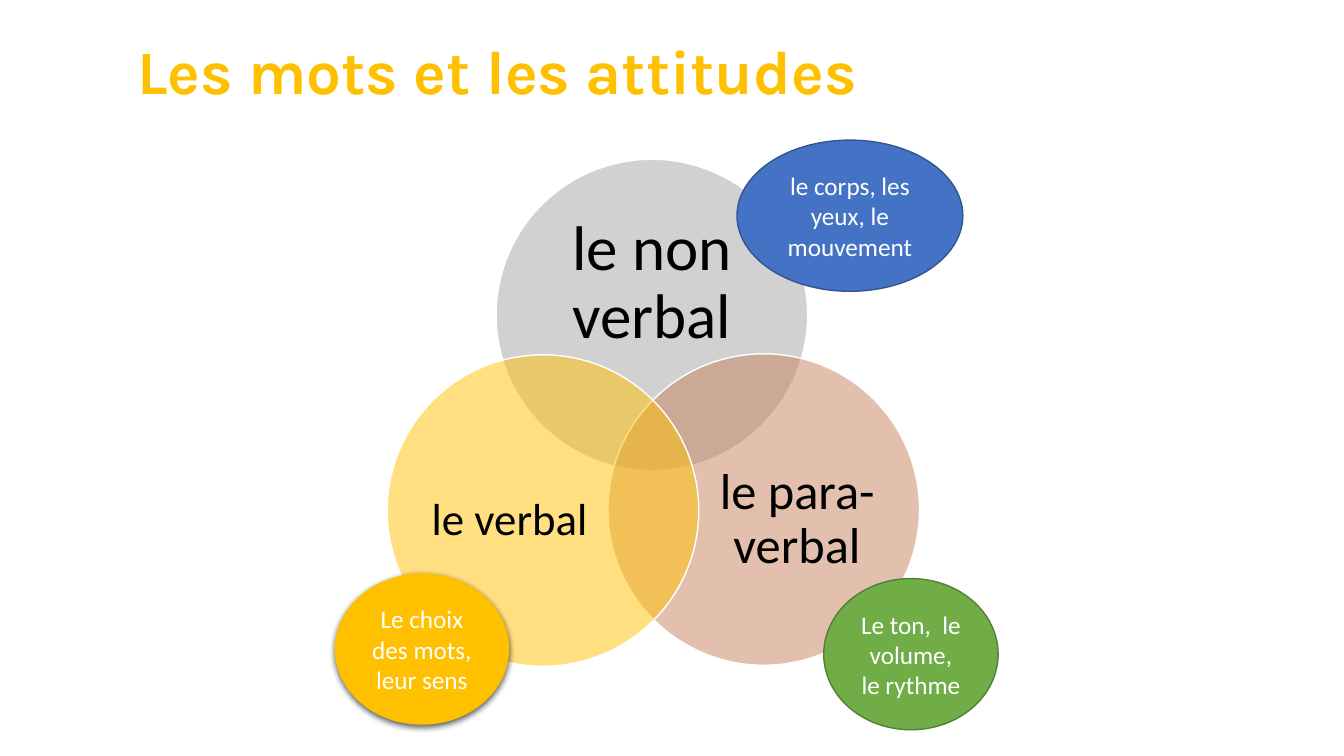
from dataclasses import dataclass
from lxml.etree import SubElement as Sub
from pptx import Presentation
from pptx.dml.color import RGBColor as RGB
from pptx.enum.shapes import MSO_SHAPE as Kind
from pptx.enum.text import MSO_ANCHOR as Anchor, PP_ALIGN as Align
from pptx.oxml.ns import qn
from pptx.util import Inches, Pt


@dataclass(frozen=True)
class Theme:
    gold: str = "FFC000"
    gray: str = "A5A5A5"
    clay: str = "C9835D"
    blue: str = "4472C4"
    navy: str = "325491"
    green: str = "70AD47"
    moss: str = "538035"
    white: str = "FFFFFF"
    black: str = "000000"
    head: str = "Karla"
    body: str = "Calibri"
    title: int = 44
    top: int = 45
    right: int = 36
    left: int = 32
    note: int = 18


T = Theme()
deck = Presentation()
deck.slide_width, deck.slide_height = Inches(13.33), Inches(7.5)
slide = deck.slides.add_slide(deck.slide_layouts[5])


def write(shape, text, size, color, name=T.body, bold=False, align=Align.CENTER, space=1.0):
    frame = shape.text_frame
    frame.word_wrap = True
    frame.vertical_anchor = Anchor.MIDDLE
    para = frame.paragraphs[0]
    para.alignment, para.line_spacing = align, space
    run = para.add_run()
    run.text = text
    for key, val in {"name": name, "size": Pt(size), "bold": bold}.items():
        setattr(run.font, key, val)
    run.font.color.rgb = RGB.from_string(color)
    return frame


def oval(box, fill, edge):
    shape = slide.shapes.add_shape(Kind.OVAL, *map(Inches, box))
    shape.shadow.inherit = False
    shape.fill.solid()
    shape.fill.fore_color.rgb = RGB.from_string(fill)
    if edge:
        shape.line.color.rgb = RGB.from_string(edge)
        shape.line.width = Pt(1)
    else:
        shape.line.fill.background()
    return shape


# Title
title = slide.shapes.title
place = {"left": 1.26, "top": 0.2, "width": 10.6, "height": 1.07}
for key, val in place.items():
    setattr(title, key, Inches(val))
write(title, "Les mots et les attitudes", T.title, T.gold, T.head, True, Align.LEFT, 0.9)

# Overlapping circles with their labels
size = 3.09
circles = [
    (4.92, 1.58, T.gray, "le non verbal", T.top, (5.33, 2.12, 2.27, 1.39)),
    (6.03, 3.51, T.clay, "le para-verbal", T.right, (6.98, 4.31, 1.85, 1.7)),
    (3.84, 3.52, T.gold, "le verbal", T.left, (4.13, 4.32, 1.85, 1.7)),
]
for x, y, fill, text, points, box in circles:
    disc = oval((x, y, size, size), fill, T.white)
    tint = disc.fill._xPr.find(qn("a:solidFill"))[0]
    Sub(tint, qn("a:alpha"), val="50000")
    label = slide.shapes.add_textbox(*map(Inches, box))
    frame = write(label, text, points, T.black, space=0.9)
    for side in ("left", "right", "top", "bottom"):
        setattr(frame, "margin_" + side, 0)

# Notes around the circles
notes = [
    (7.31, 1.39, 2.24, T.blue, T.navy, "le corps, les yeux, le mouvement"),
    (3.32, 5.69, 1.73, T.gold, None, "Le choix des mots, leur sens"),
    (8.17, 5.74, 1.73, T.green, T.moss, "Le ton,  le volume, le rythme"),
]
for x, y, wide, fill, edge, text in notes:
    note = oval((x, y, wide, 1.5), fill, edge)
    write(note, text, T.note, T.white)
    if not edge:  # soft shadow in place of an outline
        glow = note._element.spPr.find(qn("a:effectLst"))
        shade = Sub(glow, qn("a:outerShdw"), blurRad=str(Pt(4.5)), dist=str(Pt(1.5)),
                    dir="5400000", algn="ctr", rotWithShape="0")
        dark = Sub(shade, qn("a:srgbClr"), val=T.black)
        Sub(dark, qn("a:alpha"), val="63000")

deck.save("out.pptx")
